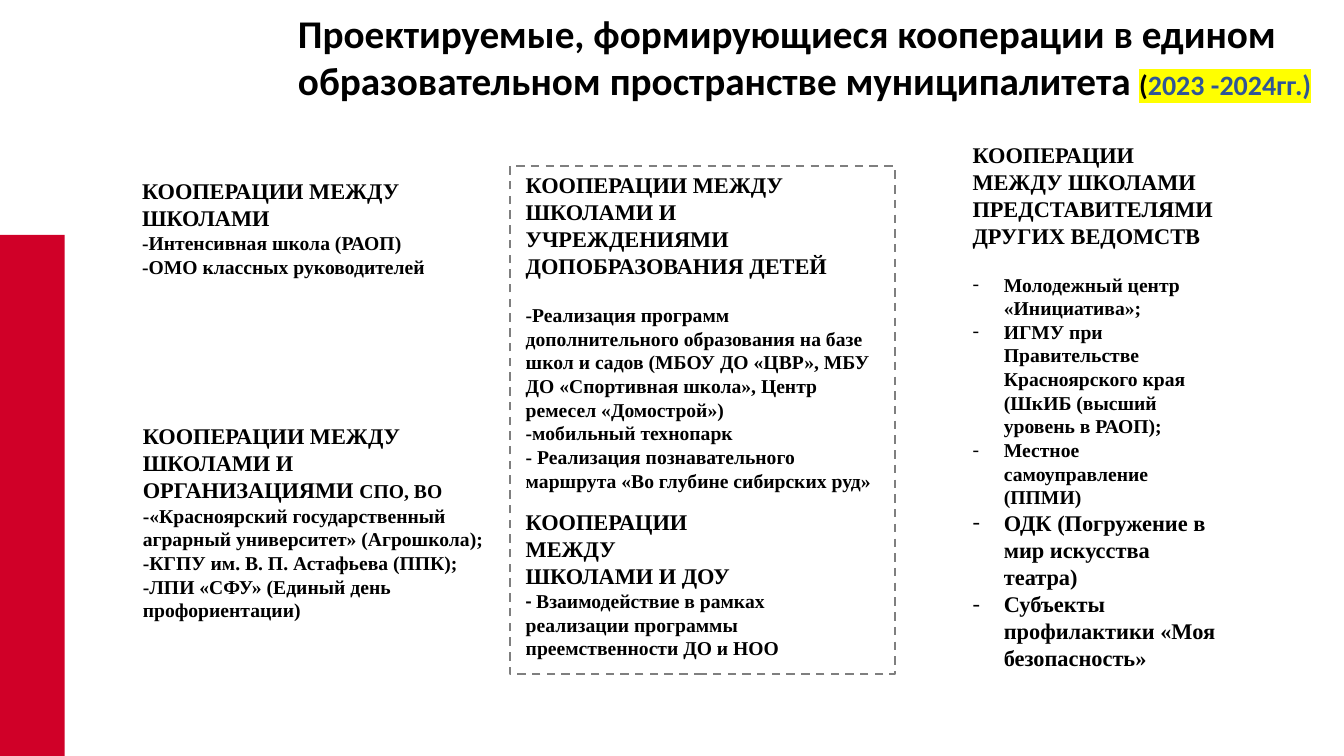
from pptx import Presentation
from pptx import util as u
from pptx.dml.color import RGBColor
from pptx.enum import dml, shapes, text
from pptx.oxml import parse_xml
from pptx.oxml.ns import nsdecls

BLACK = RGBColor(0, 0, 0)
BLUE = RGBColor(0x2F, 0x55, 0x97)
GRAY = RGBColor(0x7F, 0x7F, 0x7F)
RED = RGBColor(0xD0, 0x00, 0x28)
YELLOW = "FFFF00"
SERIF, SANS = "Times New Roman", "Calibri"
HEAD, BODY = 16, 14
LEAD = 1.205   # line pitch of the serif text, per point of size
INDENT = 0.79  # hanging indent of the dash list, cm

# Content: each paragraph is (text or runs, size, format)
TITLE = [([("Проектируемые, формирующиеся кооперации в едином "
            "образовательном пространстве муниципалитета ", {}),
           ("(", {"size": 20, "mark": YELLOW}),
           ("2023 -2024гг.)", {"size": 20, "mark": YELLOW, "color": BLUE})],
          28, {})]

SCHOOLS = [
    ("КООПЕРАЦИИ МЕЖДУ ШКОЛАМИ", HEAD, {}),
    ("-Интенсивная школа (РАОП)", BODY, {}),
    ("-ОМО классных руководителей", BODY, {}),
]
COLLEGES = [
    ([("КООПЕРАЦИИ МЕЖДУ ШКОЛАМИ И ОРГАНИЗАЦИЯМИ ", {}),
      ("СПО, ВО", {"size": BODY})], HEAD, {}),
    ("-«Красноярский государственный аграрный университет» (Агрошкола);",
     BODY, {}),
    ("-КГПУ им. В. П. Астафьева (ППК);", BODY, {}),
    ("-ЛПИ «СФУ» (Единый день профориентации)", BODY, {}),
]
CLUBS = [
    ("КООПЕРАЦИИ МЕЖДУ ШКОЛАМИ И УЧРЕЖДЕНИЯМИ ДОПОБРАЗОВАНИЯ ДЕТЕЙ",
     HEAD, {}),
    ("-Реализация программ дополнительного образования на базе школ и садов "
     "(МБОУ ДО «ЦВР», МБУ ДО «Спортивная школа», Центр ремесел «Домострой»)",
     BODY, {"gap": True}),
    ("-мобильный технопарк", BODY, {}),
    ("- Реализация познавательного маршрута «Во глубине сибирских руд»",
     BODY, {}),
]
NURSERY = [
    ("КООПЕРАЦИИ МЕЖДУ", HEAD, {}),
    ("ШКОЛАМИ И ДОУ", HEAD, {}),
    ([("- ", {"name": SANS}),
      ("Взаимодействие в рамках реализации программы "
       "преемственности ДО и НОО", {})], BODY, {}),
]
AGENCIES = [
    ("КООПЕРАЦИИ МЕЖДУ ШКОЛАМИ ПРЕДСТАВИТЕЛЯМИ ДРУГИХ ВЕДОМСТВ", HEAD, {}),
    ("Молодежный центр «Инициатива»;", BODY, {"dash": True, "gap": True}),
    ("ИГМУ при Правительстве Красноярского края "
     "(ШкИБ (высший уровень в РАОП);", BODY, {"dash": True}),
    ("Местное самоуправление (ППМИ)", BODY, {"dash": True}),
    ("ОДК (Погружение в мир искусства театра)", HEAD, {"dash": True}),
    ("Субъекты профилактики «Моя безопасность»", HEAD, {"dash": True}),
]

# Places in cm: left, top, width, height
WIDE, HIGH = 33.87, 19.05
BAR = (0, 5.92, 1.63, HIGH - 5.92)
FRAME = (12.85, 4.19, 9.7, 12.8)
BOXES = [
    (SCHOOLS, (3.33, 4.34, 9, 6.25), {}),
    (COLLEGES, (3.35, 10.52, 9.47, 7.19), {}),
    (CLUBS, (13, 4.19, 9.35, 8.38), {}),
    (NURSERY, (13, 12.67, 6.93, 4.11), {}),
    (AGENCIES, (24.26, 3.38, 6.91, 13.69), {"anchor": text.MSO_ANCHOR.MIDDLE}),
    (TITLE, (7.26, 0.1, WIDE - 7.26, 2.64), {"name": SANS, "lead": None}),
]

deck = Presentation()
deck.slide_width, deck.slide_height = u.Cm(WIDE), u.Cm(HIGH)
slide = deck.slides.add_slide(deck.slide_layouts[6])


def add_run(para, words, size, name, color=BLACK, mark=None):
    run = para.add_run()
    run.text = words
    font = run.font
    font.size, font.name, font.bold = u.Pt(size), name, True
    font.color.rgb = color
    if mark:
        glow = parse_xml(f'<a:highlight {nsdecls("a")}>'
                         f'<a:srgbClr val="{mark}"/></a:highlight>')
        fill = run._r.get_or_add_rPr().find(
            "{http://schemas.openxmlformats.org/drawingml/2006/main}solidFill")
        fill.addnext(glow)


def add_text(paras, place, name=SERIF, lead=LEAD, anchor=text.MSO_ANCHOR.TOP):
    frame = slide.shapes.add_textbox(*map(u.Cm, place)).text_frame
    frame.word_wrap, frame.vertical_anchor = True, anchor
    for i, (words, size, style) in enumerate(paras):
        para = frame.paragraphs[0] if i == 0 else frame.add_paragraph()
        if lead:
            para.line_spacing = u.Pt(round(size * lead, 1))
        if style.get("gap"):
            para.space_before = u.Pt(round(size * LEAD, 1))
        if style.get("dash"):
            props = para._p.get_or_add_pPr()
            props.set("marL", str(u.Cm(INDENT)))
            props.set("indent", str(-u.Cm(INDENT)))
            props.append(parse_xml(f'<a:buFont {nsdecls("a")} typeface="{name}"/>'))
            props.append(parse_xml(f'<a:buChar {nsdecls("a")} char="-"/>'))
        runs = [(words, {})] if isinstance(words, str) else words
        for part, look in runs:
            add_run(para, part, **{"size": size, "name": name, **look})


def add_rect(place):
    rect = slide.shapes.add_shape(shapes.MSO_SHAPE.RECTANGLE,
                                  *map(u.Cm, place))
    rect.shadow.inherit = False
    return rect


# Dashed frame around the middle column
frame = add_rect(FRAME)
frame.fill.background()
frame.line.color.rgb = GRAY
frame.line.width = u.Pt(1.5)
frame.line.dash_style = dml.MSO_LINE.DASH

# Red bar at the left edge
bar = add_rect(BAR)
bar.fill.solid()
bar.fill.fore_color.rgb = RED
bar.line.fill.background()

# Title and columns
for paras, place, style in BOXES:
    add_text(paras, place, **style)

deck.save("out.pptx")
